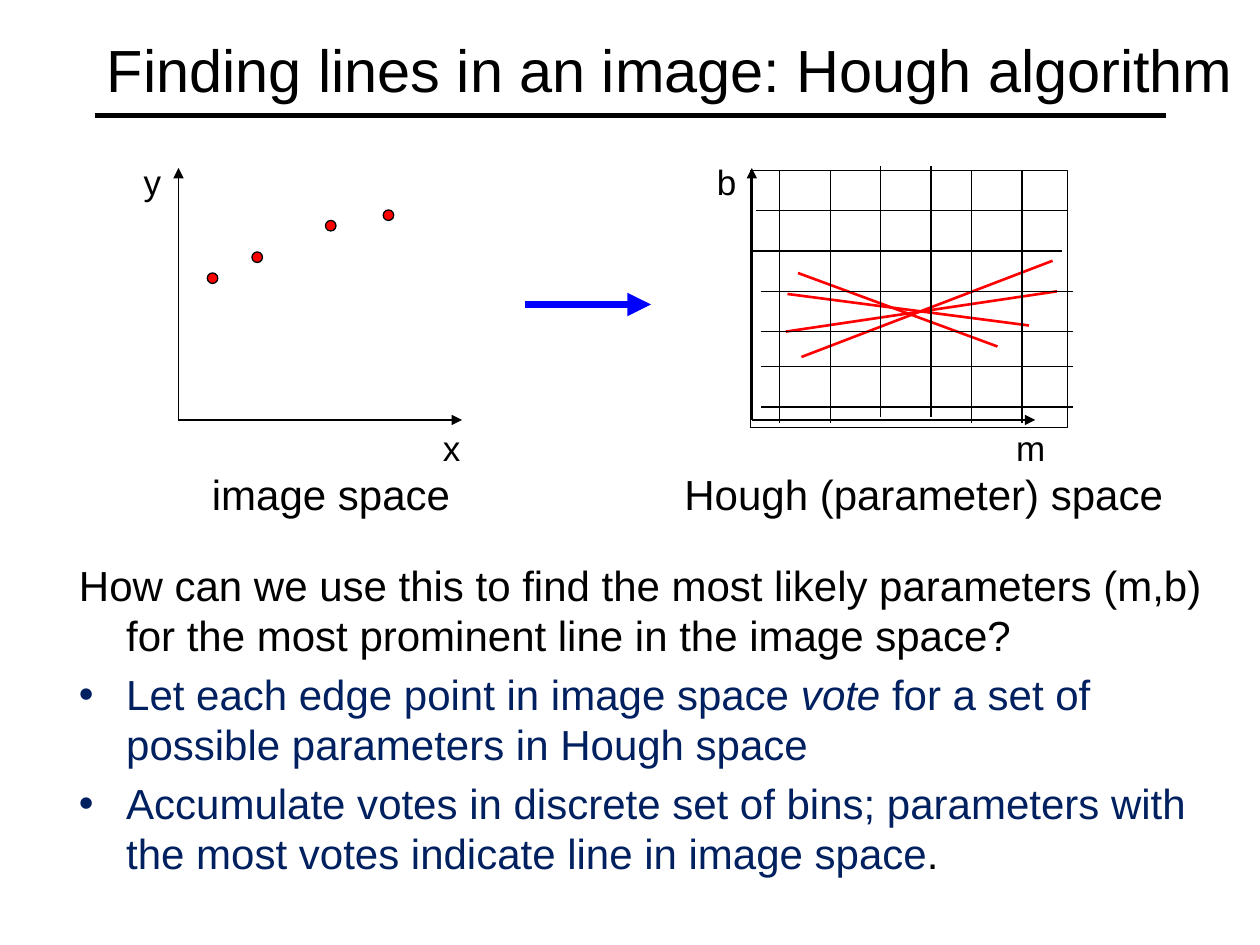
"""Build the slide on finding lines with the Hough algorithm."""
from dataclasses import dataclass

from lxml.etree import SubElement
from pptx import Presentation
from pptx.dml.color import RGBColor as RGB
from pptx.enum.shapes import MSO_CONNECTOR as Connector, MSO_SHAPE as Shape
from pptx.enum.text import MSO_ANCHOR as Anchor, MSO_AUTO_SIZE as AutoSize
from pptx.oxml.ns import qn
from pptx.util import Pt


@dataclass(frozen=True)
class Theme:
    font: str = "Arial"
    black: RGB = RGB(0, 0, 0)
    navy: RGB = RGB(0x00, 0x20, 0x60)
    red: RGB = RGB(0xFF, 0, 0)
    blue: RGB = RGB(0, 0, 0xFF)
    title: float = 34
    body: float = 24
    label: float = 20
    thin: float = 0.75


class SlideBuilder:
    def __init__(self, slide, theme):
        self.shapes = slide.shapes
        self.theme = theme

    def style(self, paragraph, size, color):
        font = paragraph.font
        font.name, font.size = self.theme.font, Pt(size)
        font.color.rgb = color

    def box(self, left, top, width, height, wrap=True):
        frame = self.shapes.add_textbox(Pt(left), Pt(top), Pt(width), Pt(height)).text_frame
        frame.word_wrap = wrap
        return frame

    def title(self, text, *bounds):
        frame = self.box(*bounds)
        frame.vertical_anchor = Anchor.MIDDLE
        frame.text = text
        self.style(frame.paragraphs[0], self.theme.title, self.theme.black)

    def label(self, text, size, *bounds):
        frame = self.box(*bounds, wrap=False)
        frame.auto_size = AutoSize.SHAPE_TO_FIT_TEXT
        frame.text = text
        self.style(frame.paragraphs[0], size, self.theme.black)

    def body(self, items, *bounds):
        frame = self.box(*bounds)
        for index, (bullet, color, runs) in enumerate(items):
            paragraph = frame.add_paragraph() if index else frame.paragraphs[0]
            paragraph.space_before = Pt(4.8)
            properties = paragraph._p.get_or_add_pPr()
            properties.set("marL", str(Pt(27)))
            properties.set("indent", str(Pt(-27)))
            if bullet:
                SubElement(properties, qn("a:buFont"), typeface=self.theme.font)
                SubElement(properties, qn("a:buChar"), char=bullet)
            else:
                SubElement(properties, qn("a:buNone"))
            self.style(paragraph, self.theme.body, color)
            for text, italic, run_color in runs:
                run = paragraph.add_run()
                run.text = text
                if italic:
                    run.font.italic = True
                if run_color is not None:
                    run.font.color.rgb = run_color

    def line(self, start, end, color, weight, arrow=False):
        connector = self.shapes.add_connector(
            Connector.STRAIGHT, *(Pt(value) for value in (*start, *end)))
        connector.line.color.rgb = color
        connector.line.width = Pt(weight)
        if arrow:
            SubElement(connector.line._get_or_add_ln(), qn("a:tailEnd"), type="triangle")
        SubElement(connector._element.spPr, qn("a:effectLst"))

    def outline(self, kind, left, top, width, height, fill=None):
        shape = self.shapes.add_shape(kind, Pt(left), Pt(top), Pt(width), Pt(height))
        shape.shadow.inherit = False
        if fill is None:
            shape.fill.background()
        else:
            shape.fill.solid()
            shape.fill.fore_color.rgb = fill
        shape.line.color.rgb = self.theme.black
        shape.line.width = Pt(self.theme.thin)

    def axes(self, left, across, up):
        size, black = self.theme.label, self.theme.black
        origin = (left, 240)
        self.line(origin, (left, 96), black, 1, arrow=True)
        self.line(origin, (left + 162, 240), black, 1, arrow=True)
        for (name, width), x, y in ((across, left + 144, 240), (up, left - 27, 88)):
            self.label(name, size, x, y, width, 31)


def main():
    theme = Theme()
    deck = Presentation()
    deck.slide_width, deck.slide_height = Pt(720), Pt(540)
    builder = SlideBuilder(deck.slides.add_slide(deck.slide_layouts[6]), theme)

    builder.line((54, 66), (666, 66), theme.black, 3)
    builder.title("Finding lines in an image: Hough algorithm", 54, 6, 666, 66)
    question = ("How can we use this to find the most likely parameters (m,b) "
                "for the most prominent line in the image space?")
    builder.body([
        (None, theme.black, [(question, False, None)]),
        ("•", theme.navy, [
            ("Let each edge point in image space ", False, None),
            ("vote ", True, None),
            ("for a set of possible parameters in Hough space", False, None)]),
        ("•", theme.navy, [
            ("Accumulate votes in discrete set of bins; parameters with "
             "the most votes indicate line in image space", False, None),
            (".", False, theme.black)]),
    ], 38, 316, 658, 150)

    builder.axes(102, ("x", 24.5), ("y", 24.5))
    builder.axes(429.6, ("m", 31), ("b", 26))
    builder.label("image space", theme.body, 114, 264, 150.5, 36)
    builder.label("Hough (parameter) space", theme.body, 384, 264, 291, 36)
    builder.line((300, 174), (372, 174), theme.blue, 4.5, arrow=True)

    for x, y in ((118.5, 156), (144, 144), (186, 126), (219, 120)):
        builder.outline(Shape.OVAL, x, y, 6, 6, theme.red)

    votes = (((456, 156), (570, 198)), ((450, 168), (588, 186)),
             ((458, 204), (601.5, 149)), ((449, 189.5), (604, 166.5)))
    for start, end in votes:
        builder.line(start, end, theme.red, 1.5)

    builder.outline(Shape.RECTANGLE, 429, 97.5, 181, 147)
    rows = ((432, 120.5), (429, 143.5), (435, 166.5), (435, 189.5), (435, 209.5), (435, 232.5))
    for x, y in rows:
        builder.line((x, y), (x + 178, y), theme.black, theme.thin)
    columns = ((445.5, 98), (474.5, 98), (503, 95), (532, 95), (555, 98), (584, 98))
    for x, y in columns:
        builder.line((x, y), (x, y + 143.5), theme.black, theme.thin)

    deck.save("out.pptx")


if __name__ == "__main__":
    main()
